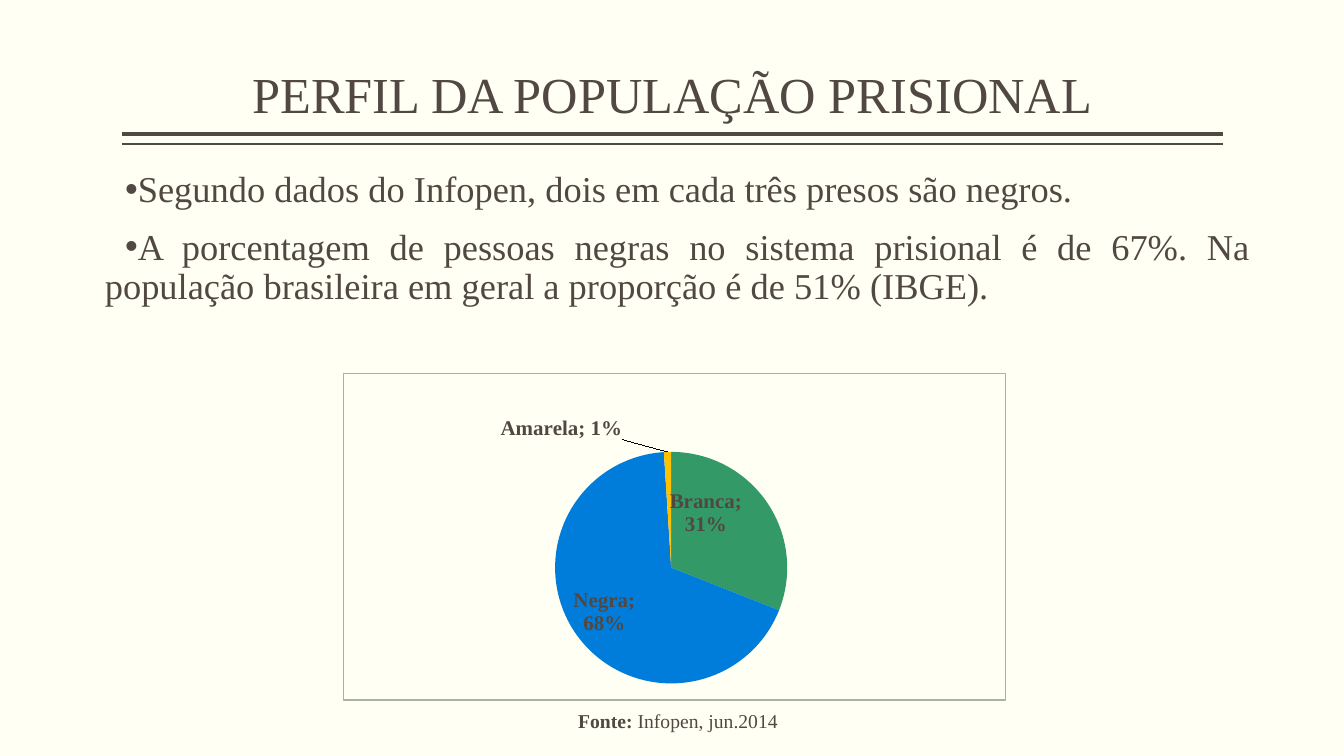
from lxml import etree
from pptx import Presentation
from pptx.chart.data import CategoryChartData
from pptx.dml.color import RGBColor
from pptx.enum.chart import XL_CHART_TYPE as CT, XL_LABEL_POSITION as POS
from pptx.enum.text import MSO_ANCHOR, MSO_AUTO_SIZE, PP_ALIGN
from pptx.oxml import parse_xml
from pptx.oxml.ns import nsdecls, qn
from pptx.util import Inches, Pt

INK = "514843"
FONT = "Times New Roman"


def rgb(color):
    return RGBColor.from_string(color)


def style(font, size, bold=False):
    font.name, font.size, font.bold = FONT, Pt(size), bold
    font.color.rgb = rgb(INK)


prs = Presentation()
prs.slide_width, prs.slide_height = Inches(13.33), Inches(7.5)
s = prs.slides.add_slide(prs.slide_layouts[1])
s.background.fill.solid()
s.background.fill.fore_color.rgb = rgb("FFFFF3")
title, body = s.placeholders

# Double rule under the title
for y, width in ((1.33, 3), (1.43, 1)):
    rule = s.shapes.add_connector(1, Inches(1.21), Inches(y), Inches(12.13), Inches(y))
    rule.line.color.rgb = rgb(INK)
    rule.line.width = Pt(width)
    etree.SubElement(rule._element.spPr, qn("a:effectLst"))

# Text frames
source = s.shapes.add_textbox(0, 0, 0, 0)
frames = (
    (title, (1.21, 0.08, 10.92, 1.2), MSO_ANCHOR.BOTTOM, PP_ALIGN.CENTER, 36,
     "PERFIL DA POPULAÇÃO PRISIONAL"),
    (body, (1.04, 1.65, 11.37, 1.6), MSO_ANCHOR.TOP, PP_ALIGN.JUSTIFY, 26,
     "Segundo dados do Infopen, dois em cada três presos são negros.\n"
     "A porcentagem de pessoas negras no sistema prisional é de 67%. "
     "Na população brasileira em geral a proporção é de 51% (IBGE)."),
    (source, (1.04, 6.98, 11.37, 0.36), MSO_ANCHOR.MIDDLE, PP_ALIGN.CENTER, 14, "Fonte: "),
)
for sp, box, anchor, align, size, text in frames:
    sp.left, sp.top, sp.width, sp.height = map(Inches, box)
    tf = sp.text_frame
    tf.text = text
    tf.word_wrap = True
    tf.auto_size = MSO_AUTO_SIZE.NONE
    tf.vertical_anchor = anchor
    tf.margin_left = tf.margin_right = 0
    tf.margin_top = tf.margin_bottom = Inches(0.05)
    for p in tf.paragraphs:
        p.alignment = align
        p.line_spacing = 0.9
        p.space_before = Pt(0)
        style(p.runs[0].font, size)

for p in body.text_frame.paragraphs:
    p.space_after = Pt(13)
    pPr = p._p.get_or_add_pPr()
    pPr.set("marL", "0")
    pPr.set("indent", str(Inches(0.2)))
    etree.SubElement(pPr, qn("a:buChar"), char="•")

p = source.text_frame.paragraphs[0]
p.runs[0].font.bold = True
r = p.add_run()
r.text = "Infopen, jun.2014"
style(r.font, 14)

# Pie chart
data = CategoryChartData()
data.categories = ["Branca", "Negra", "Amarela", "Indígena", "Outros"]
data.add_series("Series 1", (31, 68, 1, 0, 0))
chart = s.shapes.add_chart(CT.PIE, Inches(3.4), Inches(3.7), Inches(6.58), Inches(3.25), data).chart
chart.has_title = chart.has_legend = False
style(chart.font, 18)
plot = chart.plots[0]
plot.vary_by_categories = True
series = plot.series[0]
for i, color in enumerate(("339966", "007DDA", "FFC000", "827266", "AE9A7E")):
    fill = series.points[i].format.fill
    fill.solid()
    fill.fore_color.rgb = rgb(color)

labels = series.data_labels
style(labels.font, 15, True)
labels.number_format, labels.number_format_is_linked = "0%", False
labels.show_value = False
labels._element.find(qn("c:showLeaderLines")).set("val", "1")

# Label offsets are fractions of the chart size
for i, position, dx, dy in ((0, POS.CENTER, -0.02, -0.07),
                            (1, POS.CENTER, -0.03, 0.03),
                            (2, POS.OUTSIDE_END, -0.16, -0.02)):
    label = series.points[i].data_label
    style(label.font, 15, True)
    label.position = position
    dLbl = labels._element.findall(qn("c:dLbl"))[i]
    for tag, val in (("showVal", "0"), ("showCatName", "1"), ("showPercent", "1")):
        dLbl.find(qn("c:" + tag)).set("val", val)
    idx = dLbl.find(qn("c:idx"))
    idx.addnext(parse_xml(f'<c:numFmt {nsdecls("c")} formatCode="0%" sourceLinked="0"/>'))
    idx.addnext(parse_xml(
        f'<c:layout {nsdecls("c")}><c:manualLayout>'
        f'<c:x val="{dx}"/><c:y val="{dy}"/></c:manualLayout></c:layout>'))

area = chart._chartSpace.chart.plotArea
for layout in area.findall(qn("c:layout")):
    area.remove(layout)
area.insert(0, parse_xml(
    f'<c:layout {nsdecls("c")}><c:manualLayout><c:layoutTarget val="inner"/>'
    '<c:xMode val="edge"/><c:yMode val="edge"/><c:x val="0.11"/><c:y val="0.24"/>'
    '<c:w val="0.77"/><c:h val="0.71"/></c:manualLayout></c:layout>'))
chart._chartSpace.chart.addnext(parse_xml(
    f'<c:spPr {nsdecls("c", "a")}><a:noFill/><a:ln w="{Pt(1)}"><a:solidFill>'
    '<a:srgbClr val="A7B3A1"/></a:solidFill></a:ln></c:spPr>'))

prs.save("out.pptx")
